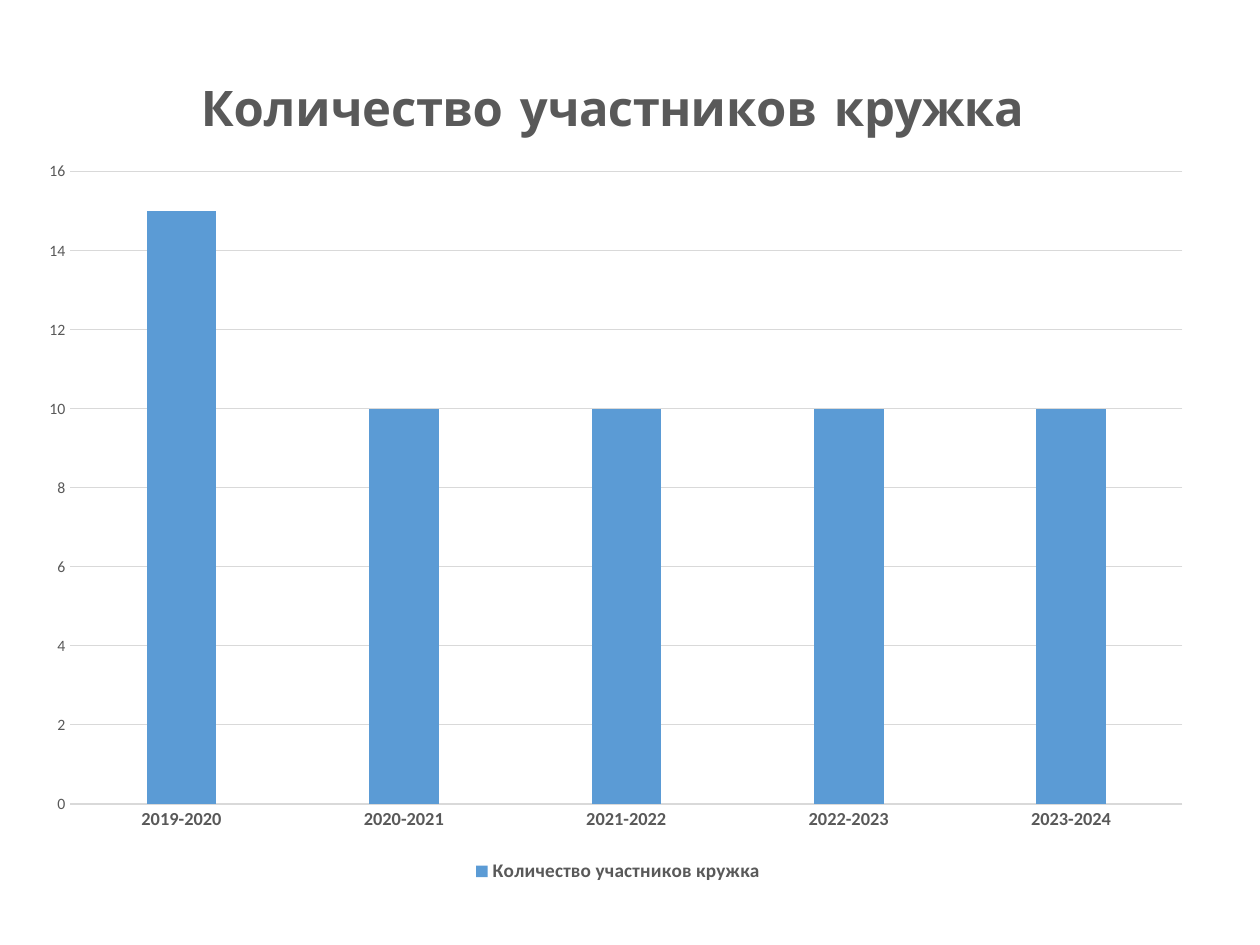
from lxml import etree
from pptx import Presentation
from pptx import util as u
from pptx.chart.data import CategoryChartData
from pptx.dml.color import RGBColor
from pptx.enum import chart as charts
from pptx.oxml.ns import qn

GRAY = RGBColor(0x59, 0x59, 0x59)
LIGHT_GRAY = RGBColor(0xD9, 0xD9, 0xD9)
BLUE = RGBColor(0x5B, 0x9B, 0xD5)
BLACK = RGBColor(0, 0, 0)

NAME = "Количество участников кружка "
MEMBERS = {
    "2019-2020": 15,
    "2020-2021": 10,
    "2021-2022": 10,
    "2022-2023": 10,
    "2023-2024": 10,
}


class SlideBuilder:
    body_font = "Calibri"
    title_font = "Comic Neue"

    def __init__(self, presentation):
        self.slide = presentation.slides.add_slide(presentation.slide_layouts[6])

    def format_font(self, font, size, bold=False, name=None, color=GRAY):
        values = {"size": u.Pt(size), "bold": bold, "name": name or self.body_font}
        for attribute, value in values.items():
            setattr(font, attribute, value)
        font.color.rgb = color

    def format_line(self, line):
        line.color.rgb = LIGHT_GRAY
        line.width = u.Pt(0.75)

    def add_column_chart(self, name, values, left, top, width, height):
        data = CategoryChartData()
        data.categories = list(values)
        data.add_series(name, list(values.values()))
        chart = self.slide.shapes.add_chart(
            charts.XL_CHART_TYPE.COLUMN_CLUSTERED,
            *map(u.Inches, (left, top, width, height)), data
        ).chart
        self.format_font(chart.font, 10, color=BLACK)
        plot = chart.plots[0]
        for attribute, value in {
            "gap_width": 219, "overlap": -27, "vary_by_categories": False
        }.items():
            setattr(plot, attribute, value)
        fill = plot.series[0].format.fill
        fill.solid()
        fill.fore_color.rgb = BLUE
        return chart

    def add_title(self, chart, title):
        chart.has_title = True
        chart.chart_title.include_in_layout = False
        paragraph = chart.chart_title.text_frame.paragraphs[0]
        run = paragraph.add_run()
        run.text = title
        self.format_font(run.font, 28, True, self.title_font)

    def add_legend(self, chart):
        chart.has_legend = True
        chart.legend.position = charts.XL_LEGEND_POSITION.BOTTOM
        chart.legend.include_in_layout = False
        self.format_font(chart.legend.font, 11, True)

    def format_axes(self, chart):
        category, value = chart.category_axis, chart.value_axis
        for axis in (category, value):
            axis.major_tick_mark = charts.XL_TICK_MARK.NONE
            axis.minor_tick_mark = charts.XL_TICK_MARK.NONE
        self.format_font(category.tick_labels.font, 10.5, True)
        self.format_font(value.tick_labels.font, 9)
        self.format_line(category.format.line)
        self.format_line(value.major_gridlines.format.line)
        value.format.line.fill.background()

    def place_plot(self, chart, left, top, width, height):
        area = chart.plots[0]._element.getparent()
        for old_layout in area.findall(qn("c:layout")):
            area.remove(old_layout)
        layout = etree.Element(qn("c:layout"))
        area.insert(0, layout)
        manual = etree.SubElement(layout, qn("c:manualLayout"))
        for tag, value in {
            "layoutTarget": "inner", "xMode": "edge", "yMode": "edge",
            "x": left, "y": top, "w": width, "h": height
        }.items():
            etree.SubElement(manual, qn(f"c:{tag}")).set("val", str(value))


def main():
    presentation = Presentation()
    presentation.slide_width = u.Inches(10)
    presentation.slide_height = u.Inches(7.5)
    builder = SlideBuilder(presentation)
    chart = builder.add_column_chart(NAME, MEMBERS, 0.28, 0.36, 9.29, 6.69)
    builder.add_title(chart, NAME)
    builder.add_legend(chart)
    builder.format_axes(chart)
    builder.place_plot(chart, 0.03, 0.15, 0.95, 0.75)
    presentation.save("out.pptx")


if __name__ == "__main__":
    main()
